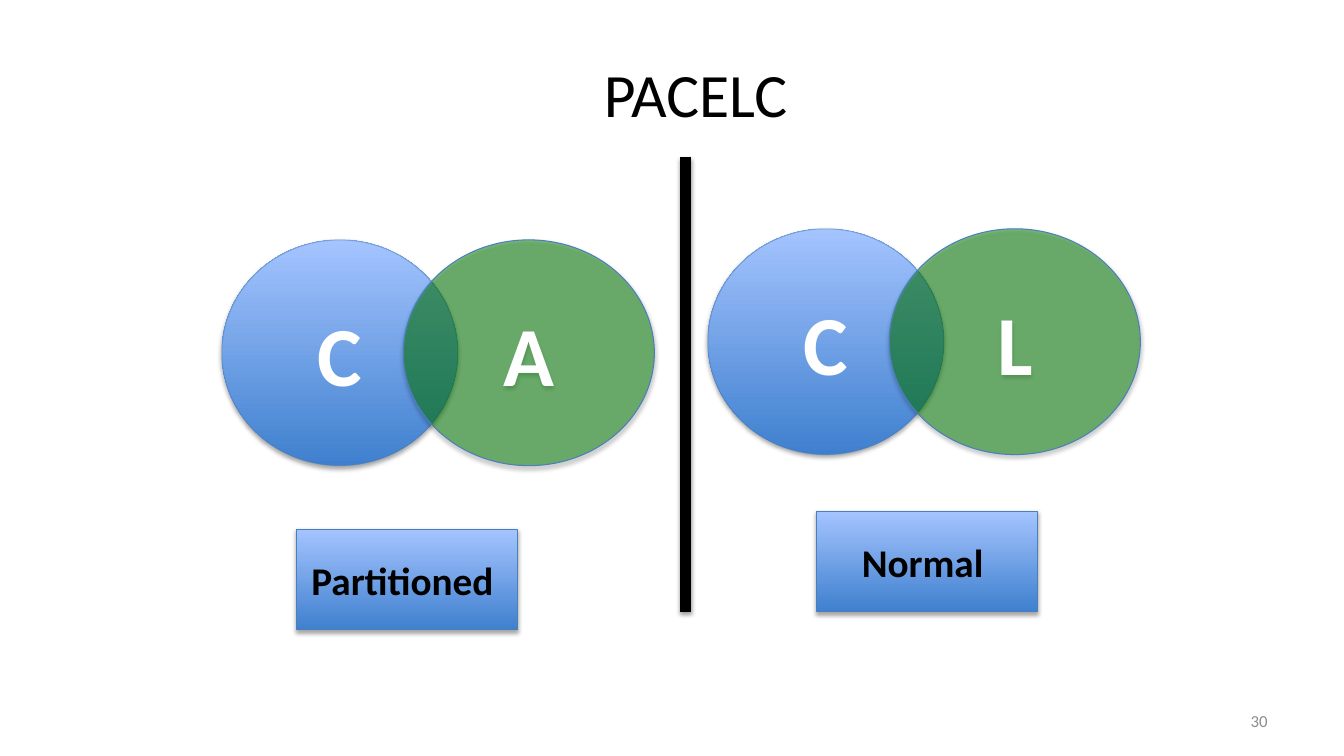
"""Build the PACELC slide: two overlapping pairs of circles split by a divider."""

from dataclasses import dataclass

from lxml import etree
from pptx import Presentation
from pptx.dml.color import RGBColor
from pptx.enum.shapes import MSO_CONNECTOR, MSO_SHAPE
from pptx.enum.text import MSO_ANCHOR, PP_ALIGN
from pptx.oxml.ns import qn
from pptx.util import Emu, Pt

ELLIPSE, RECTANGLE = MSO_SHAPE.OVAL, MSO_SHAPE.RECTANGLE
STRAIGHT = MSO_CONNECTOR.STRAIGHT
MIDDLE = MSO_ANCHOR.MIDDLE
CENTER, RIGHT = PP_ALIGN.CENTER, PP_ALIGN.RIGHT

EMU_PER_PX = 9144
EMU_PER_POINT = 12700
FONT = "Calibri"
BLACK, WHITE, GRAY = "000000", "FFFFFF", "8C8C8C"
DARK_BLUE, LIGHT_BLUE, OUTLINE, GREEN = "3F80CE", "A4C4FF", "4B7EBC", "008000"


@dataclass(frozen=True)
class Box:
    left: int
    top: int
    width: int
    height: int


@dataclass(frozen=True)
class State:
    name: str
    label: Box
    venn_left: int
    venn_top: int
    letters: str


STATES = (
    State("Partitioned ", Box(294, 525, 219, 100), 220, 238, "CA"),
    State("Normal ", Box(810, 507, 219, 100), 702, 227, "CL"),
)


def px(length: int) -> Emu:
    """Convert slide pixels to EMU."""
    return Emu(length * EMU_PER_PX)


def rgb(color: str) -> RGBColor:
    """Convert a hex string to a colour."""
    return RGBColor.from_string(color)


def edges(box: Box) -> tuple[Emu, Emu, Emu, Emu]:
    """Return the box as left, top, width and height in EMU."""
    return px(box.left), px(box.top), px(box.width), px(box.height)


def set_alpha(fill, percent: int) -> None:
    """Make the colour of a solid fill element partly transparent."""
    etree.SubElement(fill[0], qn("a:alpha"), val=str(percent * 1000))


def add_shadow(shape, opacity: int, distance: float) -> None:
    """Give a shape a soft shadow straight below it."""
    effects = etree.SubElement(shape.element.spPr, qn("a:effectLst"))
    shadow = etree.SubElement(
        effects,
        qn("a:outerShdw"),
        blurRad=str(round(3.1 * EMU_PER_POINT)),
        dist=str(round(distance * EMU_PER_POINT)),
        dir="5400000",
        rotWithShape="0",
    )
    color = etree.SubElement(shadow, qn("a:srgbClr"), val=BLACK)
    etree.SubElement(color, qn("a:alpha"), val=str(opacity * 1000))


def write(shape, text: str, size: int, color: str, bold: bool = False, align=CENTER) -> None:
    """Write one vertically centred paragraph into a shape."""
    frame = shape.text_frame
    frame.word_wrap = True
    frame.vertical_anchor = MIDDLE
    paragraph = frame.paragraphs[0]
    paragraph.text = text
    paragraph.alignment = align
    font = paragraph.font
    font.name, font.size, font.bold = FONT, Pt(size), bold
    font.color.rgb = rgb(color)


def add_text(slide, box: Box, text: str, size: int, color: str, align=CENTER) -> None:
    """Add a plain text box."""
    write(slide.shapes.add_textbox(*edges(box)), text, size, color, align=align)


def add_panel(slide, kind, box: Box, text: str, size: int, color: str, green: bool = False):
    """Add a shadowed shape, see-through green or graded blue."""
    shape = slide.shapes.add_shape(kind, *edges(box))
    if green:
        shape.fill.solid()
        shape.fill.fore_color.rgb = rgb(GREEN)
        set_alpha(shape.element.spPr.find(qn("a:solidFill")), 50)
    else:
        shape.fill.gradient()
        shape.fill.gradient_angle = 90
        for stop, stop_color in zip(shape.fill.gradient_stops, (DARK_BLUE, LIGHT_BLUE)):
            stop.color.rgb = rgb(stop_color)
    shape.line.color.rgb = rgb(OUTLINE)
    shape.line.width = Pt(0.75)
    add_shadow(shape, 35, 1.8)
    write(shape, text, size, color, bold=True)
    return shape


def add_venn(slide, state: State) -> None:
    """Add the two overlapping circles of a state."""
    first, second = state.letters
    left, top = state.venn_left, state.venn_top
    blue = add_panel(slide, ELLIPSE, Box(left, top, 234, 224), first, 60, WHITE)
    set_alpha(blue.element.spPr.find(qn("a:ln")).find(qn("a:solidFill")), 50)
    add_panel(slide, ELLIPSE, Box(left + 180, top, 249, 224), second, 60, WHITE, green=True)


def add_divider(slide) -> None:
    """Add the thick line between the two states."""
    divider = slide.shapes.add_connector(STRAIGHT, px(680), px(156), px(680), px(607))
    divider.line.color.rgb = rgb(BLACK)
    divider.line.width = Pt(8)
    add_shadow(divider, 38, 1.6)


def main() -> None:
    """Build and save the slide."""
    presentation = Presentation()
    presentation.slide_width, presentation.slide_height = px(1333), px(750)
    slide = presentation.slides.add_slide(presentation.slide_layouts[6])
    add_text(slide, Box(240, 30, 900, 125), "PACELC", 44, BLACK)
    for state in STATES:
        add_venn(slide, state)
    add_divider(slide)
    for state in STATES:
        add_panel(slide, RECTANGLE, state.label, state.name, 28, BLACK)
    add_text(slide, Box(956, 695, 311, 40), "30", 12, GRAY, RIGHT)
    presentation.save("out.pptx")


if __name__ == "__main__":
    main()
